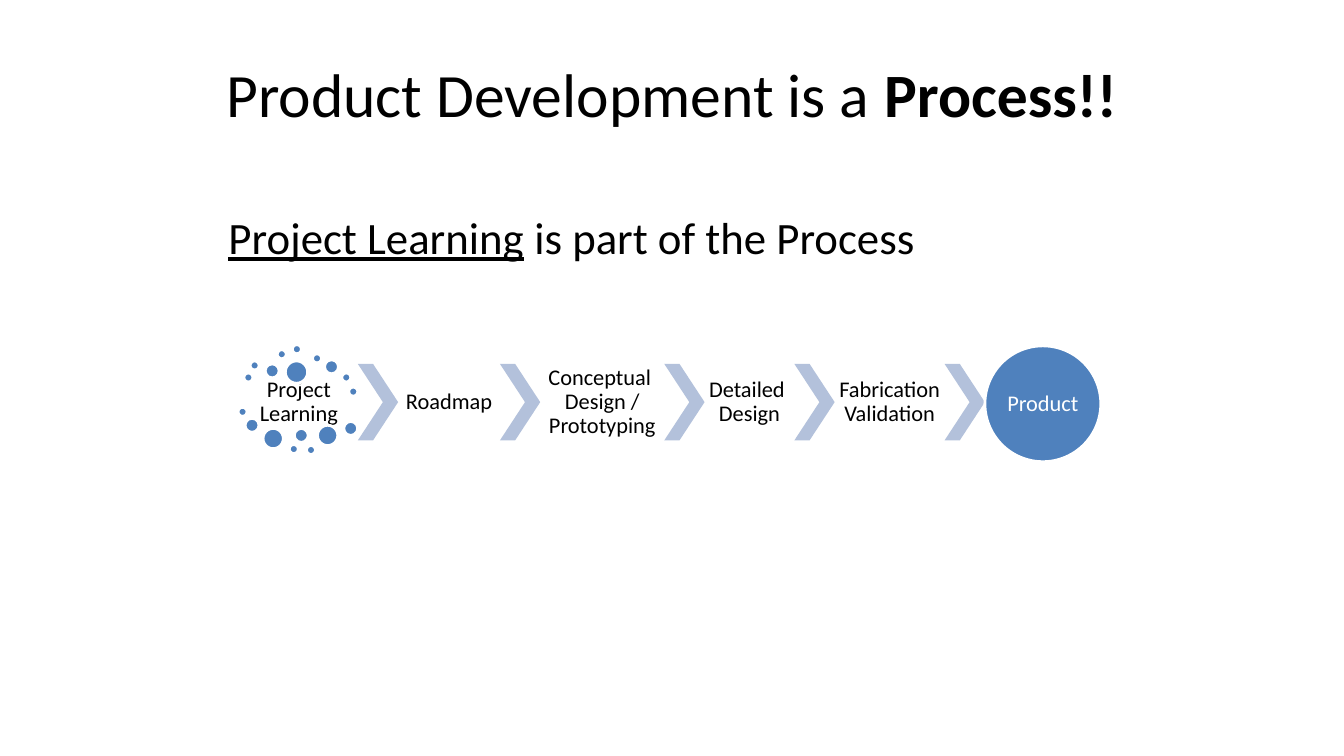
from pptx import Presentation
from pptx.dml.color import RGBColor
from pptx.enum.shapes import MSO_SHAPE
from pptx.enum.text import MSO_ANCHOR, MSO_AUTO_SIZE, PP_ALIGN
from pptx.oxml.xmlchemy import OxmlElement
from pptx.util import Pt

COLORS = {"text": "000000", "white": "FFFFFF", "blue": "4F81BD", "chevron": "B3C1DB"}
FONT = "Calibri"
CHEVRON_WIDTH = 28.8
CHEVRON_HEIGHT = 54.7
CIRCLE_SIZE = 82.8
STAGES = [
    ("Roadmap", 72.7),
    ("Conceptual \vDesign / Prototyping", 88.6),
    ("Detailed \vDesign", 64.1),
    ("Fabrication\vValidation", 78.5),
]
DOTS = {
    6.5: [(4.2, 20.4), (8.6, 11.8), (28, 3.8), (38.8, 0.2), (53.2, 6.7),
          (74.1, 20.4), (79.1, 30.5), (0, 44.9), (36.6, 71.5), (48.9, 72.2)],
    10: [(19.4, 13.9), (61.8, 11), (5, 52.8), (40.2, 60), (75.5, 55)],
    14.5: [(17.9, 60), (56.8, 57.8)],
    16: [(33.8, 11.8)],
}


def set_values(target, values):
    for name, value in values.items():
        setattr(target, name, value)


def color(name):
    return RGBColor.from_string(COLORS[name])


def place(shape, box):
    set_values(shape, dict(zip(("left", "top", "width", "height"), map(Pt, box))))


def add_runs(paragraph, size, runs):
    for text, emphasis in runs:
        run = paragraph.add_run()
        run.text = text
        set_values(run.font, {"name": FONT, "size": Pt(size), **emphasis})
        run.font.color.rgb = color("text")


def add_title(slide, box):
    title = slide.shapes.title
    place(title, box)
    frame = title.text_frame
    set_values(frame, {"vertical_anchor": MSO_ANCHOR.MIDDLE,
                       "auto_size": MSO_AUTO_SIZE.NONE})
    paragraph = frame.paragraphs[0]
    paragraph.alignment = PP_ALIGN.CENTER
    add_runs(paragraph, 44, [("Product Development is a ", {}),
                             ("Process!!", {"bold": True})])


def add_body(slide, box):
    body = slide.placeholders[1]
    place(body, box)
    body.text_frame.auto_size = MSO_AUTO_SIZE.NONE
    paragraph = body.text_frame.paragraphs[0]
    properties = paragraph._p.get_or_add_pPr()
    properties.set("marL", "0")
    properties.set("indent", "0")
    properties.append(OxmlElement("a:buNone"))
    paragraph.space_before = Pt(0)
    add_runs(paragraph, 32, [("Project Learning", {"underline": True}),
                             (" is part of the Process", {})])


def add_preset(slide, preset, box, fill, outlined=False):
    shape = slide.shapes.add_shape(preset, *map(Pt, box))
    shape.shadow.inherit = False
    shape.fill.solid()
    shape.fill.fore_color.rgb = color(fill)
    if outlined:
        shape.line.color.rgb = color("white")
        shape.line.width = Pt(2)
    else:
        shape.line.fill.background()
    return shape


def write_label(shape, text, text_color="text", inset=1.44):
    frame = shape.text_frame
    margins = ("margin_left", "margin_top", "margin_right", "margin_bottom")
    set_values(frame, {"word_wrap": True, "vertical_anchor": MSO_ANCHOR.MIDDLE,
                       **dict.fromkeys(margins, Pt(inset))})
    paragraph = frame.paragraphs[0]
    paragraph.text = text
    set_values(paragraph, {"alignment": PP_ALIGN.CENTER, "line_spacing": 0.9})
    set_values(paragraph.font, {"name": FONT, "size": Pt(16)})
    paragraph.font.color.rgb = color(text_color)
    for run in paragraph.runs:
        set_values(run.font, {"name": FONT, "size": Pt(16)})
        run.font.color.rgb = color(text_color)


def add_label(slide, box, text):
    write_label(slide.shapes.add_textbox(*map(Pt, box)), text)


def add_project_learning(slide, box):
    left, top, width, height = box
    add_label(slide, (left + 1.4, top + 21.1, width - 1.4, 41), "Project Learning")
    for size, offsets in DOTS.items():
        for x, y in offsets:
            add_preset(slide, MSO_SHAPE.OVAL, (left + x, top + y, size, size),
                       "blue", outlined=True)


def add_chevron(slide, box):
    chevron = add_preset(slide, MSO_SHAPE.CHEVRON, box, "chevron")
    chevron.adjustments[0] = 0.623


def add_process(slide, box):
    left, top, width, height = box
    learning_width = 85.6
    add_project_learning(slide, (left, top, learning_width, height))
    x = left + learning_width
    row_top = top + 13.9
    for text, label_width in STAGES:
        add_chevron(slide, (x, row_top, CHEVRON_WIDTH, CHEVRON_HEIGHT))
        x += CHEVRON_WIDTH
        add_label(slide, (x, row_top, label_width, CHEVRON_HEIGHT), text)
        x += label_width
    add_chevron(slide, (x, row_top, CHEVRON_WIDTH, CHEVRON_HEIGHT))
    product = add_preset(slide, MSO_SHAPE.OVAL,
                         (left + width - CIRCLE_SIZE, top + 1, CIRCLE_SIZE, CIRCLE_SIZE),
                         "blue", outlined=True)
    write_label(product, "Product", "white", 0)


def main():
    presentation = Presentation()
    set_values(presentation, {"slide_width": Pt(960), "slide_height": Pt(540)})
    slide = presentation.slides.add_slide(presentation.slide_layouts[1])
    add_title(slide, (48, 21.6, 864, 90))
    add_body(slide, (156, 146, 648, 255.6))
    add_process(slide, (170, 246, 616.3, 83.8))
    presentation.save("out.pptx")


if __name__ == "__main__":
    main()
